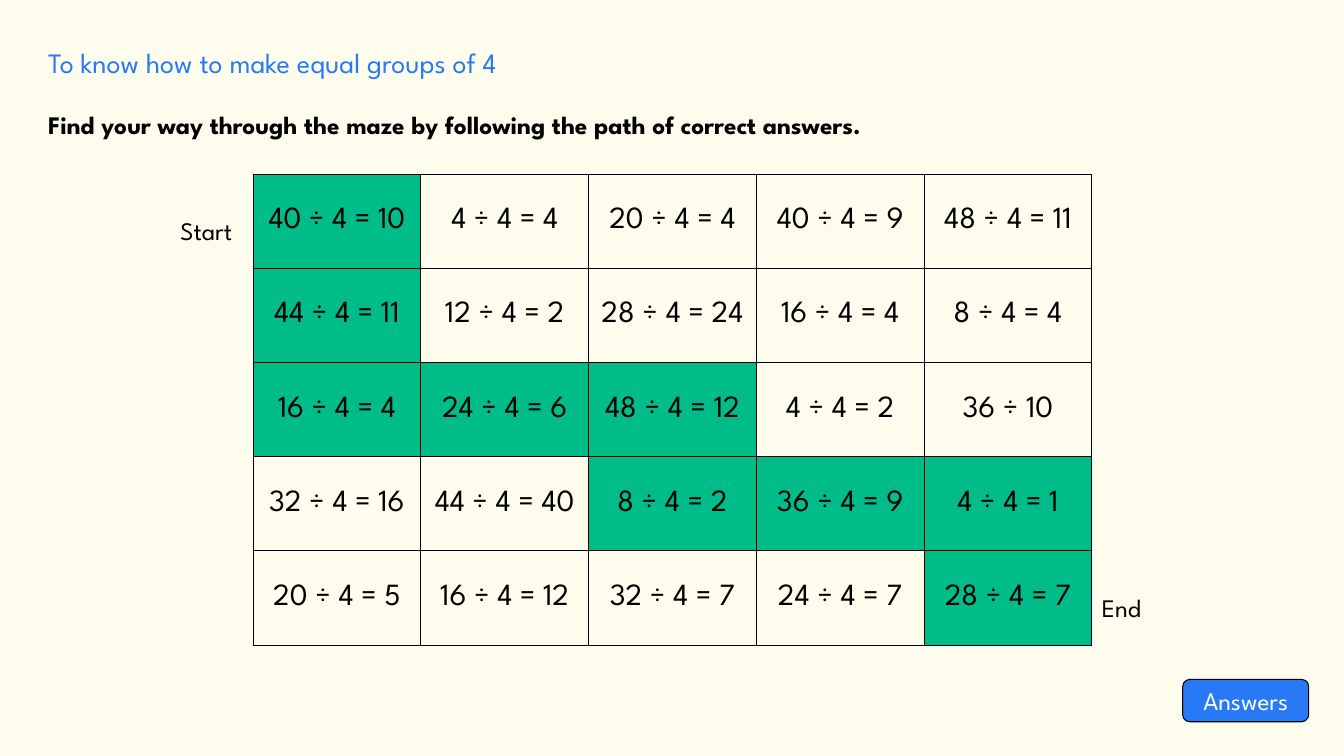
from dataclasses import dataclass
from lxml.etree import SubElement as Sub
from pptx import Presentation
from pptx.dml.color import RGBColor as Rgb
from pptx.enum.shapes import MSO_SHAPE as Kind
from pptx.enum.text import MSO_ANCHOR as Anchor, PP_ALIGN as Align
from pptx.oxml.ns import qn
from pptx.util import Inches, Pt


@dataclass(frozen=True)
class Theme:
    font: str = "League Spartan"
    cream: str = "FEFCED"
    blue: str = "2779F5"
    green: str = "00BC89"
    black: str = "000000"
    white: str = "FFFFFF"
    title: int = 20
    body: int = 18
    sum: int = 22
    line: float = 0.75


SUMS = [
    ["40 ÷ 4 = 10", "4 ÷ 4 = 4", "20 ÷ 4 = 4", "40 ÷ 4 = 9", "48 ÷ 4 = 11"],
    ["44 ÷ 4 = 11", "12 ÷ 4 = 2", "28 ÷ 4 = 24", "16 ÷ 4 = 4", "8 ÷ 4 = 4"],
    ["16 ÷ 4 = 4", "24 ÷ 4 = 6", "48 ÷ 4 = 12", "4 ÷ 4 = 2", "36 ÷ 10"],
    ["32 ÷ 4 = 16", "44 ÷ 4 = 40", "8 ÷ 4 = 2", "36 ÷ 4 = 9", "4 ÷ 4 = 1"],
    ["20 ÷ 4 = 5", "16 ÷ 4 = 12", "32 ÷ 4 = 7", "24 ÷ 4 = 7", "28 ÷ 4 = 7"],
]
# Columns of the correct path in each row
ROUTE = [{0}, {0}, {0, 1, 2}, {2, 3, 4}, {4}]
GRID = (2.51, 1.73, 8.32, 4.67)


def write(frame, text, size, color, bold=False, align=Align.LEFT, space=1.0):
    para = frame.paragraphs[0]
    para.alignment = align
    para.line_spacing = space
    run = para.add_run()
    run.text = text
    font = run.font
    font.name, font.size, font.bold = Theme.font, Pt(size), bold
    font.color.rgb = Rgb.from_string(color)


class Page:
    def __init__(self, deck, theme):
        self.theme = theme
        self.slide = deck.slides.add_slide(deck.slide_layouts[6])
        fill = self.slide.background.fill
        fill.solid()
        fill.fore_color.rgb = Rgb.from_string(theme.cream)

    def label(self, box, text, size=Theme.body, color=Theme.black, **style):
        frame = self.slide.shapes.add_textbox(*map(Inches, box)).text_frame
        frame.word_wrap = True
        write(frame, text, size, color, **style)

    def button(self, box, text):
        shape = self.slide.shapes.add_shape(Kind.ROUNDED_RECTANGLE, *map(Inches, box))
        shape.shadow.inherit = False
        shape.fill.solid()
        shape.fill.fore_color.rgb = Rgb.from_string(self.theme.blue)
        shape.line.color.rgb = Rgb.from_string(self.theme.black)
        shape.line.width = Pt(self.theme.line)
        shape.text_frame.vertical_anchor = Anchor.MIDDLE
        write(shape.text_frame, text, self.theme.body, self.theme.white,
              align=Align.CENTER)

    def border(self, cell):
        props = cell._tc.get_or_add_tcPr()
        for side in "LRTB":
            line = Sub(props, qn(f"a:ln{side}"), w=str(Pt(self.theme.line)))
            Sub(Sub(line, qn("a:solidFill")), qn("a:srgbClr"), val=self.theme.black)

    def grid(self, box, paint):
        table = self.slide.shapes.add_table(
            len(SUMS), len(SUMS[0]), *map(Inches, box)).table
        table.first_row = table.horz_banding = False
        for row in range(len(SUMS)):
            for col in range(len(SUMS[0])):
                cell = table.cell(row, col)
                self.border(cell)
                cell.fill.background()
                paint(cell, row, col)

    def shade(self, cell, row, col):
        if col in ROUTE[row]:
            cell.fill.solid()
            cell.fill.fore_color.rgb = Rgb.from_string(self.theme.green)

    def sum(self, cell, row, col):
        cell.vertical_anchor = Anchor.MIDDLE
        cell.margin_left = cell.margin_right = Inches(0.1)
        cell.margin_top = cell.margin_bottom = Inches(0.1)
        write(cell.text_frame, SUMS[row][col], self.theme.sum, self.theme.black,
              align=Align.CENTER)


def main():
    deck = Presentation()
    deck.slide_width, deck.slide_height = Inches(13.33), Inches(7.5)
    theme = Theme()
    page = Page(deck, theme)

    # Heading
    page.label((0.38, 0.4, 12.02, 0.44), "To know how to make equal groups of 4",
               size=theme.title, color=theme.blue)

    # Answer path under the task
    page.grid(GRID, page.shade)
    page.label((0.38, 0.89, 12.62, 0.53),
               "Find your way through the maze by following the path of correct answers.",
               bold=True, space=1.5)

    # Maze of sums
    page.grid(GRID, page.sum)
    page.label((1.69, 1.94, 0.81, 0.53), "Start", space=1.5)
    page.label((10.83, 5.68, 0.81, 0.53), "End", space=1.5)

    # Answer button
    page.button((11.73, 6.74, 1.25, 0.42), "Answers")
    deck.save("out.pptx")


if __name__ == "__main__":
    main()
